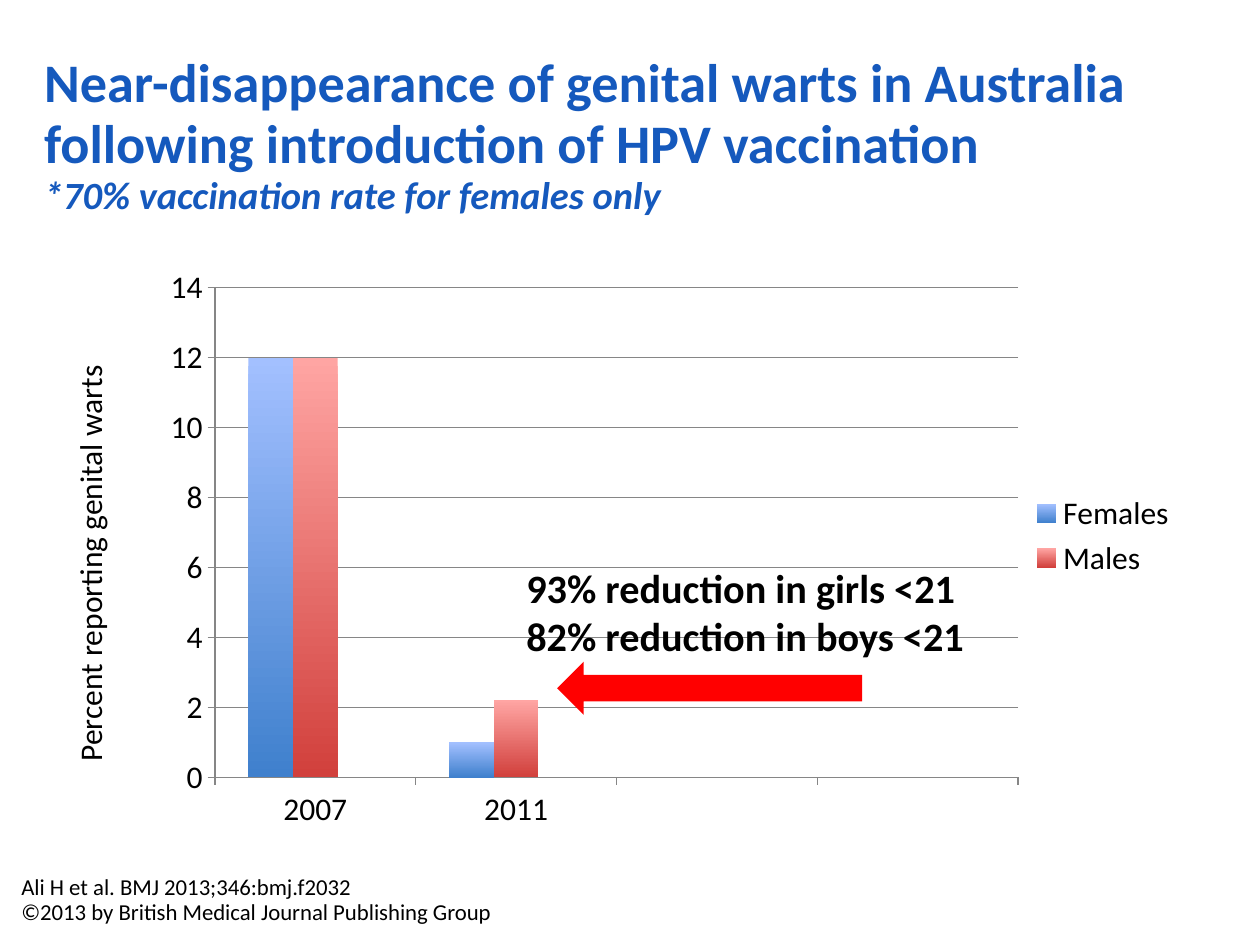
from dataclasses import dataclass

from lxml.etree import SubElement
from pptx import Presentation
from pptx.chart.data import CategoryChartData
from pptx.dml.color import RGBColor
from pptx.enum.chart import XL_CHART_TYPE, XL_LEGEND_POSITION, XL_TICK_MARK
from pptx.enum.shapes import MSO_SHAPE
from pptx.enum.text import MSO_ANCHOR, PP_ALIGN
from pptx.oxml import parse_xml
from pptx.oxml.ns import nsdecls, qn
from pptx.util import Cm, Pt


@dataclass(frozen=True)
class Theme:
    face: str = "Calibri"
    ink: str = "000000"
    blue: str = "1559BD"
    red: str = "FF0000"
    paper: str = "FFFFFF"
    rule: str = "868686"
    females: tuple = ("A3C0FF", "3F80CD")
    males: tuple = ("FFA5A3", "D1403C")
    title: int = 31
    note: int = 23
    sub: int = 22
    body: int = 18
    small: int = 13


THEME = Theme()


def apply(item, values):
    for name, value in values.items():
        setattr(item, name, value)


def style(font, size, color=THEME.ink, **more):
    apply(font, {"name": THEME.face, "size": Pt(size), **more})
    font.color.rgb = RGBColor.from_string(color)


def write(frame, lines, spacing=None):
    """Fill a frame with (text, font values) lines, one paragraph each."""
    for i, (text, values) in enumerate(lines):
        para = frame.paragraphs[0] if i == 0 else frame.add_paragraph()
        para.alignment = PP_ALIGN.LEFT
        if spacing:
            para.line_spacing = spacing
        run = para.add_run()
        run.text = text
        style(run.font, **values)


def add_text(slide, box, lines, wrap=False, spacing=None, turn=0):
    shape = slide.shapes.add_textbox(*map(Cm, box))
    shape.rotation = turn
    shape.text_frame.word_wrap = wrap
    write(shape.text_frame, lines, spacing)


def add_block(slide, kind, box, color):
    shape = slide.shapes.add_shape(kind, *map(Cm, box))
    shape.shadow.inherit = False
    shape.fill.solid()
    shape.fill.fore_color.rgb = RGBColor.from_string(color)
    shape.line.fill.background()
    return shape


def add_source(slide, box, lines):
    frame = add_block(slide, MSO_SHAPE.RECTANGLE, box, THEME.paper).text_frame
    apply(frame, {
        "margin_left": 0, "margin_right": 0, "margin_bottom": 0,
        "margin_top": Cm(0.52), "word_wrap": True,
        "vertical_anchor": MSO_ANCHOR.TOP,
    })
    write(frame, [(line, {"size": THEME.small}) for line in lines], 0.93)


def draw_rule(line):
    line.width = Pt(0.75)
    line.color.rgb = RGBColor.from_string(THEME.rule)


def shade(fill, colors):
    """Blend two colours from top to bottom."""
    fill.gradient()
    fill.gradient_angle = 270
    for stop, color in zip(fill.gradient_stops, colors):
        stop.color.rgb = RGBColor.from_string(color)


def place_plot(chart, **parts):
    """Fix the inner plot area, as shares of the chart."""
    area = chart.plots[0]._element.getparent()
    for old in area.findall(qn("c:layout")):
        area.remove(old)
    layout = parse_xml(f"<c:layout {nsdecls('c')}/>")
    manual = SubElement(layout, qn("c:manualLayout"))
    values = {"layoutTarget": "inner", "xMode": "edge", "yMode": "edge", **parts}
    for name, value in values.items():
        SubElement(manual, qn(f"c:{name}")).set("val", str(value))
    area.insert(0, layout)


def hide_entry(legend, index):
    entry = parse_xml(
        f'<c:legendEntry {nsdecls("c")}><c:idx val="{index}"/>'
        '<c:delete val="1"/></c:legendEntry>')
    legend._element.find(qn("c:legendPos")).addnext(entry)


def add_bars(slide, box):
    data = CategoryChartData()
    data.categories = ["2007", "2011", "", ""]
    data.add_series("Females", (12, 1, None, None))
    data.add_series("Males", (12, 2.2, None, None))
    data.add_series("Series 3", (None,) * 4)
    chart = slide.shapes.add_chart(
        XL_CHART_TYPE.COLUMN_CLUSTERED, *map(Cm, box), data).chart
    style(chart.font, THEME.body)
    apply(chart, {"has_title": False, "has_legend": True})
    apply(chart.legend, {
        "position": XL_LEGEND_POSITION.RIGHT, "include_in_layout": False})
    hide_entry(chart.legend, 2)

    plot = chart.plots[0]
    apply(plot, {"gap_width": 150, "overlap": 0, "vary_by_categories": False})
    for series, colors in zip(plot.series, (THEME.females, THEME.males)):
        shade(series.format.fill, colors)

    apply(chart.value_axis, {
        "minimum_scale": 0, "maximum_scale": 14, "major_unit": 2,
        "has_major_gridlines": True})
    for axis in (chart.category_axis, chart.value_axis):
        axis.major_tick_mark = XL_TICK_MARK.OUTSIDE
        draw_rule(axis.format.line)
    draw_rule(chart.value_axis.major_gridlines.format.line)
    place_plot(chart, x=0.09, y=0.1, w=0.75, h=0.79)


def main():
    deck = Presentation()
    apply(deck, {"slide_width": Cm(25.4), "slide_height": Cm(19.05)})
    slide = deck.slides.add_slide(deck.slide_layouts[6])

    add_bars(slide, (2.39, 4.55, 21.59, 12.5))
    head = {"color": THEME.blue, "bold": True}
    add_text(slide, (0.64, 0.97, 23.5, 3.61), [
        ("Near-disappearance of genital warts in Australia "
         "following introduction of HPV vaccination",
         {"size": THEME.title, **head}),
        ("*70% vaccination rate for females only",
         {"size": THEME.sub, "italic": True, **head}),
    ], wrap=True, spacing=0.93)
    add_source(slide, (0.43, 17.12, 24.56, 1.93), [
        "Ali H et al. BMJ 2013;346:bmj.f2032",
        "©2013 by British Medical Journal Publishing Group",
    ])
    add_text(slide, (-2.51, 10.77, 8.64, 1.02), [
        ("Percent reporting genital warts", {"size": THEME.body})], turn=270)
    add_block(slide, MSO_SHAPE.LEFT_ARROW, (11.23, 13.34, 6.15, 1.07), THEME.red)
    bold = {"size": THEME.note, "bold": True}
    add_text(slide, (10.36, 11.23, 9.45, 2.24), [
        ("93% reduction in girls <21", bold),
        ("82% reduction in boys <21", bold),
    ])
    deck.save("out.pptx")


if __name__ == "__main__":
    main()
